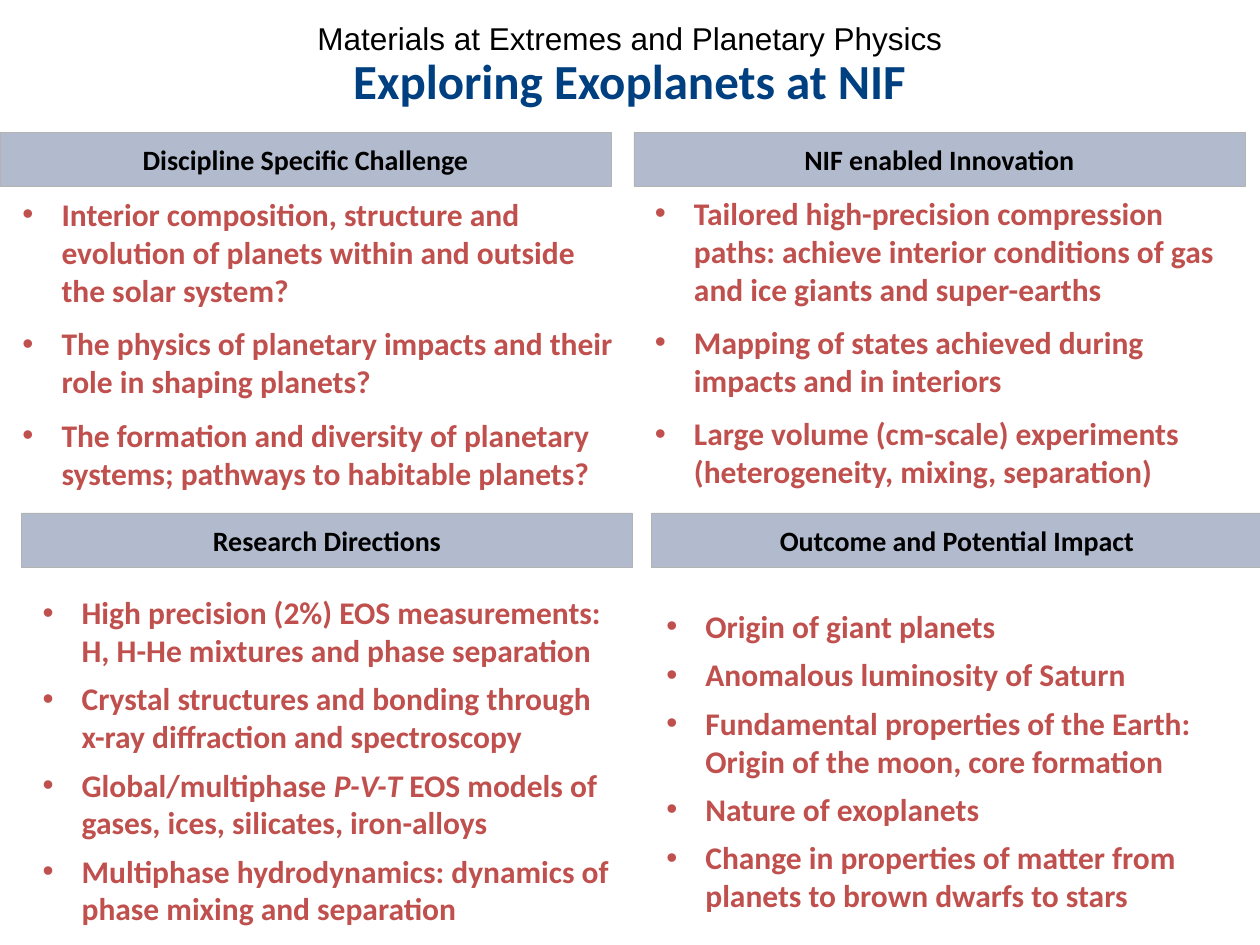
"""Build the slide on exploring exoplanets: a title and four headed bullet lists."""
from lxml import etree
from pptx import Presentation
from pptx.dml.color import RGBColor
from pptx.enum.shapes import MSO_SHAPE
from pptx.enum.text import MSO_ANCHOR, PP_ALIGN
from pptx.oxml.ns import qn
from pptx.util import Inches, Pt

RECTANGLE = MSO_SHAPE.RECTANGLE
CENTER = PP_ALIGN.CENTER
MIDDLE, BOTTOM = MSO_ANCHOR.MIDDLE, MSO_ANCHOR.BOTTOM


def color(value):
    return RGBColor.from_string(value)


def add_span(para, text, size, ink, bold=True, italic=False, face="Calibri"):
    span = para.add_run()
    span.text = text
    span.font.name = face
    span.font.size = Pt(size)
    span.font.bold = bold
    span.font.italic = italic
    span.font.color.rgb = color(ink)


deck = Presentation()
deck.slide_width, deck.slide_height = Inches(10), Inches(7.5)
page = deck.slides.add_slide(deck.slide_layouts[6])

titles = [
    ("Exploring Exoplanets at NIF", (0.33, 0.17, 9.33, 0.75), 28, "004080", True, "Calibri", BOTTOM),
    ("Materials at Extremes and Planetary Physics", (0, 0.1, 10, 0.4), 18, "000000", False, "Arial", MIDDLE),
]
for text, place, size, ink, bold, face, anchor in titles:
    box = page.shapes.add_textbox(*map(Inches, place))
    box.text_frame.word_wrap = True
    box.text_frame.vertical_anchor = anchor
    para = box.text_frame.paragraphs[0]
    para.alignment = CENTER
    add_span(para, text, size, ink, bold, face=face)

# Each item lists its spans; every second span is italic.
sections = [
    ("Discipline Specific Challenge", (0, 1.05), (0.08, 1.5, 4.92, 2.93), 9, [
        ["Interior composition, structure and evolution of planets within and outside the solar system?"],
        ["The physics of planetary impacts and their role in shaping planets?"],
        ["The formation and diversity of planetary systems; pathways to habitable planets?"],
    ]),
    ("Research Directions", (0.17, 4.07), (0.24, 4.66, 4.76, 2.78), 6, [
        ["High precision (2%) EOS measurements: H, H-He mixtures and phase separation"],
        ["Crystal structures and bonding through x-ray diffraction and spectroscopy"],
        ["Global/multiphase ", "P-V-T", " EOS models of gases, ices, silicates, iron-alloys"],
        ["Multiphase hydrodynamics: dynamics of phase mixing and separation"],
    ]),
    ("NIF enabled Innovation", (5.03, 1.05), (5.1, 1.49, 4.9, 2.93), 9, [
        ["Tailored high-precision compression paths: achieve interior conditions of gas and ice giants and super-earths"],
        ["Mapping of states achieved during impacts and in interiors"],
        ["Large volume (cm-scale) experiments (heterogeneity, mixing, separation)"],
    ]),
    ("Outcome and Potential Impact", (5.17, 4.07), (5.19, 4.77, 4.81, 2.56), 6, [
        ["Origin of giant planets"],
        ["Anomalous luminosity of Saturn"],
        ["Fundamental properties of the Earth: Origin of the moon, core formation"],
        ["Nature of exoplanets"],
        ["Change in properties of matter from planets to brown dwarfs to stars"],
    ]),
]
for heading, corner, place, gap, items in sections:
    band = page.shapes.add_shape(RECTANGLE, *map(Inches, (*corner, 4.85, 0.43)))
    band.shadow.inherit = False
    band.fill.solid()
    band.fill.fore_color.rgb = color("002060")
    fill_color = band.fill._xPr.find(qn("a:solidFill"))[0]
    etree.SubElement(fill_color, qn("a:alpha"), val="30000")
    band.line.color.rgb = color("B3B3B3")
    band.line.width = Pt(0.25)
    band.text_frame.vertical_anchor = MIDDLE
    para = band.text_frame.paragraphs[0]
    para.alignment = CENTER
    add_span(para, heading, 16, "000000")

    box = page.shapes.add_textbox(*map(Inches, place))
    frame = box.text_frame
    frame.word_wrap = True
    for index, item in enumerate(items):
        para = frame.add_paragraph() if index else frame.paragraphs[0]
        if index:
            para.space_before = Pt(gap)
        layout = para._p.get_or_add_pPr()
        layout.set("marL", str(Inches(0.31)))
        layout.set("indent", str(Inches(-0.31)))
        etree.SubElement(layout, qn("a:buFont"), typeface="Arial")
        etree.SubElement(layout, qn("a:buChar"), char="•")
        for position, text in enumerate(item):
            add_span(para, text, 18, "C0504D", italic=position % 2 == 1)

deck.save("out.pptx")
